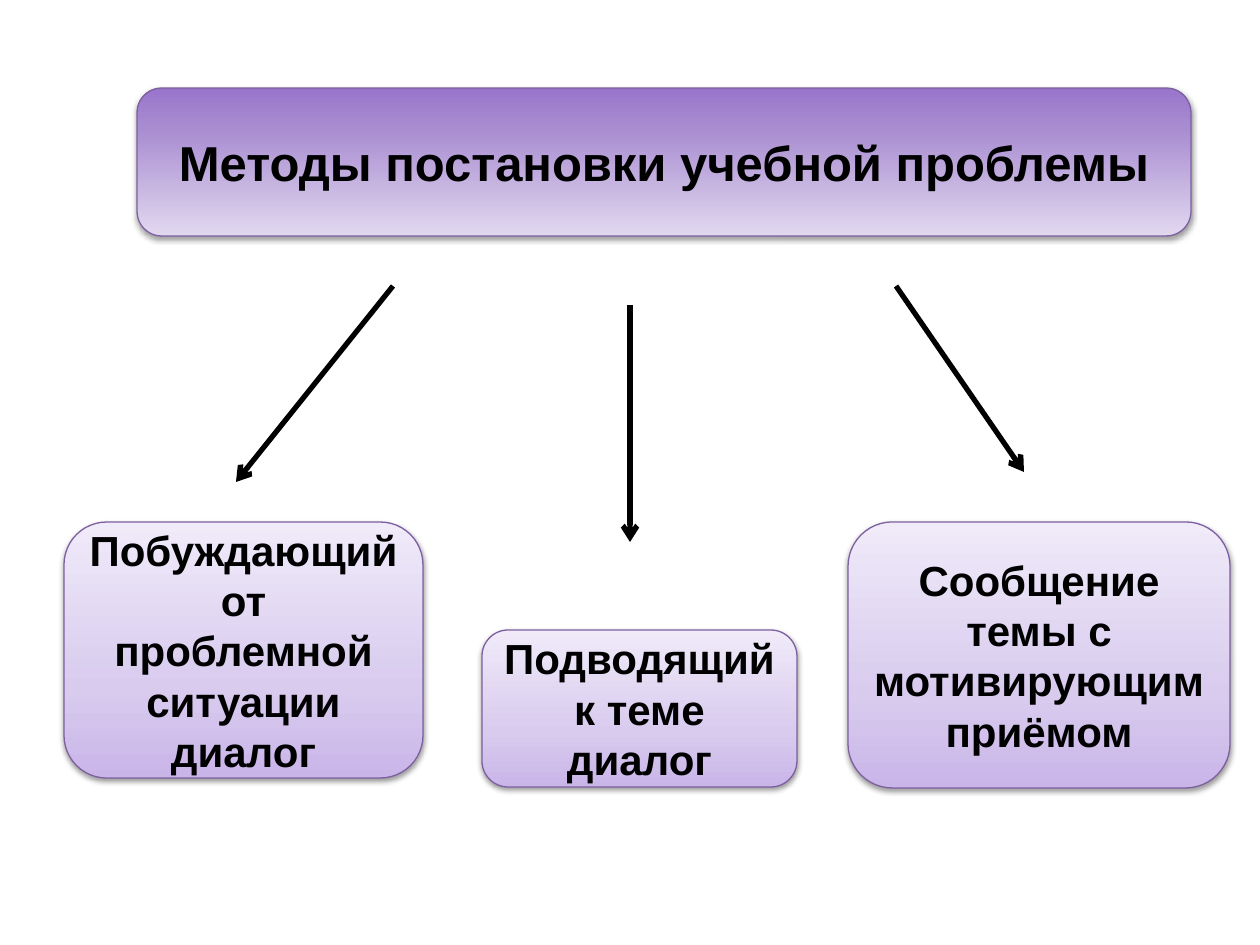
import copy

import lxml.etree
import pptx
import pptx.dml.color
import pptx.enum.shapes
import pptx.enum.text
import pptx.oxml.ns
import pptx.util

EMU_PER_PX = 914400 / 126
TITLE_ONLY_LAYOUT = 5
FONT = "Arial"
COLORS = {
    "text": "000000",
    "arrow": "000000",
    "shadow": "000000",
    "outline": "7D60A0",
    "title_light": "E1D8EF",
    "title_mid": "A98DD1",
    "title_dark": "9875CB",
    "method_dark": "C9B5E8",
    "method_mid": "D8CBEE",
    "method_light": "F0EAF9",
}
TITLE_GRADIENT = [(0, "title_light"), (0.72, "title_mid"), (1, "title_dark")]
METHOD_GRADIENT = [(0, "method_dark"), (0.35, "method_mid"), (1, "method_light")]

TITLE = "Методы постановки учебной проблемы"
TITLE_BOX = (137, 88, 1054, 148)
METHODS = [
    ("Побуждающий от проблемной ситуации диалог", (64, 522, 359, 256)),
    ("Подводящий к теме диалог", (482, 630, 315, 157)),
    ("Сообщение темы с мотивирующим приёмом", (848, 522, 382, 266)),
]
ARROWS = [
    (393, 286, 236, 482),
    (630, 305, 630, 542),
    (896, 286, 1024, 472),
]


def px(*lengths):
    return [pptx.util.Emu(round(length * EMU_PER_PX)) for length in lengths]


def rgb(name):
    return pptx.dml.color.RGBColor.from_string(COLORS[name])


def add_xml(parent, tag, **attributes):
    return lxml.etree.SubElement(parent, pptx.oxml.ns.qn(tag), attributes)


def fill_gradient(fill, stops):
    """Fill from bottom to top with (position, colour name) stops."""
    fill.gradient()
    fill.gradient_angle = 90
    last_stop = fill._fill._gradFill.gsLst[-1]
    for _ in stops[2:]:
        last_stop.addnext(copy.deepcopy(last_stop))
    for stop, (position, color) in zip(fill.gradient_stops, stops):
        stop.position = position
        stop.color.rgb = rgb(color)


def add_shadow(shape):
    shape.shadow.inherit = False
    effects = shape._element.spPr.find(pptx.oxml.ns.qn("a:effectLst"))
    shadow = add_xml(effects, "a:outerShdw", blurRad="40000", dist="20000",
                     dir="5400000", rotWithShape="0")
    color = add_xml(shadow, "a:srgbClr", val=COLORS["shadow"])
    add_xml(color, "a:alpha", val="38000")


def add_panel(slide, box, gradient):
    panel = slide.shapes.add_shape(
        pptx.enum.shapes.MSO_SHAPE.ROUNDED_RECTANGLE, *px(*box))
    fill_gradient(panel.fill, gradient)
    panel.line.color.rgb = rgb("outline")
    panel.line.width = pptx.util.Pt(0.75)
    add_shadow(panel)
    return panel


def write_text(shape, text, size):
    frame = shape.text_frame
    frame.text = text
    frame.word_wrap = True
    frame.auto_size = pptx.enum.text.MSO_AUTO_SIZE.NONE
    frame.vertical_anchor = pptx.enum.text.MSO_ANCHOR.MIDDLE
    paragraph = frame.paragraphs[0]
    paragraph.alignment = pptx.enum.text.PP_ALIGN.CENTER
    paragraph.font.name = FONT
    paragraph.font.size = pptx.util.Pt(size)
    paragraph.font.bold = True
    paragraph.font.color.rgb = rgb("text")


def add_title(slide):
    """Lay the title placeholder over its gradient panel."""
    panel = add_panel(slide, TITLE_BOX, TITLE_GRADIENT)
    title = slide.shapes.title
    title.left, title.top, title.width, title.height = px(*TITLE_BOX)
    write_text(title, TITLE, 28)
    title._element.addprevious(panel._element)


def add_arrow(slide, ends):
    arrow = slide.shapes.add_connector(
        pptx.enum.shapes.MSO_CONNECTOR.STRAIGHT, *px(*ends))
    arrow.line.color.rgb = rgb("arrow")
    arrow.line.width = pptx.util.Pt(3)
    add_xml(arrow.line._get_or_add_ln(), "a:tailEnd", type="arrow")
    add_xml(arrow._element.spPr, "a:effectLst")


def main():
    presentation = pptx.Presentation()
    presentation.slide_width, presentation.slide_height = px(1260, 945)
    slide = presentation.slides.add_slide(
        presentation.slide_layouts[TITLE_ONLY_LAYOUT])
    add_title(slide)
    for ends in ARROWS:
        add_arrow(slide, ends)
    for method, box in METHODS:
        write_text(add_panel(slide, box, METHOD_GRADIENT), method, 24)
    presentation.save("out.pptx")


if __name__ == "__main__":
    main()
